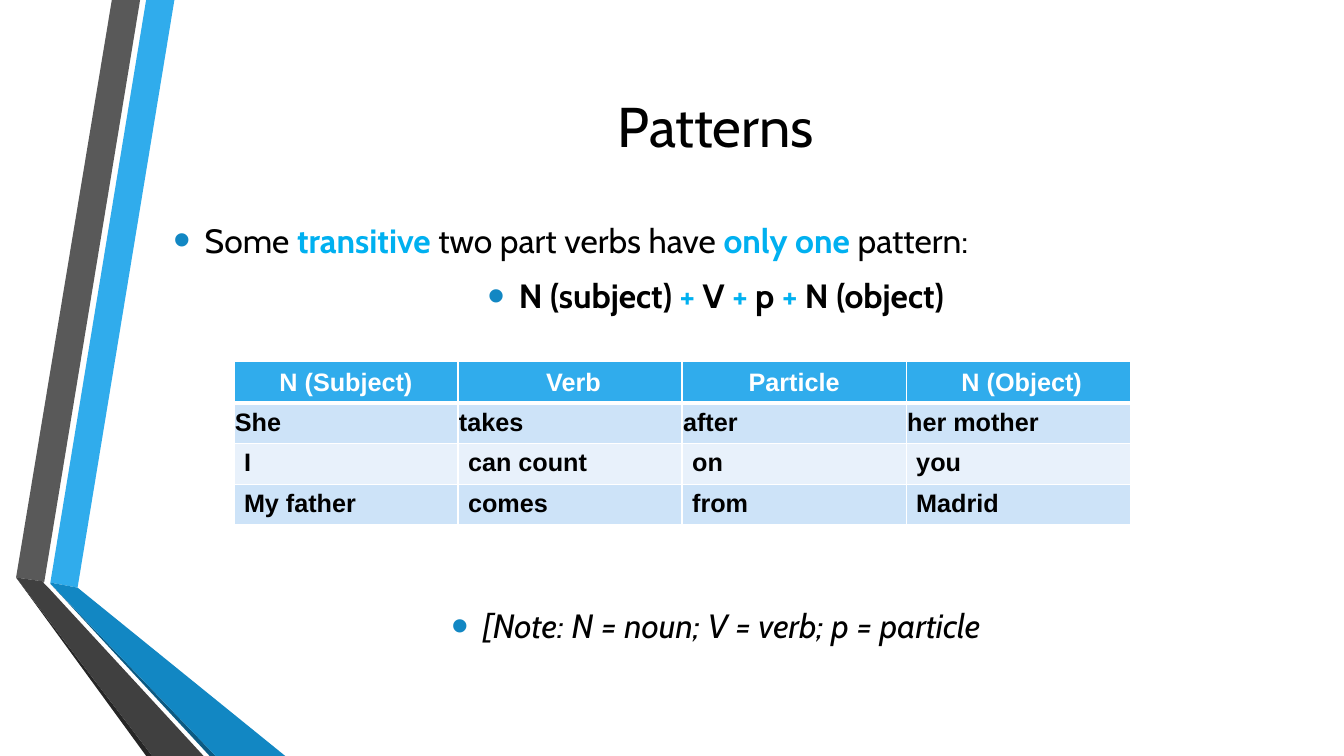
from dataclasses import dataclass

from lxml.etree import SubElement
from pptx import Presentation
from pptx.dml.color import RGBColor
from pptx.enum.text import MSO_ANCHOR as Anchor, MSO_AUTO_SIZE as AutoSize, PP_ALIGN as Align
from pptx.oxml.ns import qn
from pptx.util import Pt

EMU_PER_PX = 9144  # 100 px to the inch


@dataclass(frozen=True)
class Theme:
    text: str = "000000"
    white: str = "FFFFFF"
    accent: str = "00B0F0"
    bullet: str = "1287C3"
    blue: str = "30ACEC"
    blue_fold: str = "1287C3"
    blue_edge: str = "0C5A82"
    grey: str = "595959"
    grey_fold: str = "404040"
    grey_edge: str = "262626"
    band_dark: str = "CDE3F8"
    band_light: str = "E8F1FB"
    text_font: str = "Cabin"
    table_font: str = "Arial"
    title_size: int = 40
    body_size: int = 24
    table_size: int = 18


def px(length):
    return round(length * EMU_PER_PX)


def apply(target, values):
    for name, value in values.items():
        setattr(target, name, value)


class SlideBuilder:
    def __init__(self, presentation, theme):
        self.theme = theme
        self.slide = presentation.slides.add_slide(presentation.slide_layouts[1])

    def ribbon(self, color, points):
        builder = self.slide.shapes.build_freeform(*points[0], scale=EMU_PER_PX)
        builder.add_line_segments(points[1:], close=True)
        shape = builder.convert_to_shape()
        shape.shadow.inherit = False
        shape.fill.solid()
        shape.fill.fore_color.rgb = RGBColor.from_string(color)
        shape.line.fill.background()

    def run(self, paragraph, text, font, size, color=None, bold=False, italic=False):
        run = paragraph.add_run()
        run.text = text
        apply(run.font, {"name": font, "size": Pt(size), "bold": bold, "italic": italic})
        run.font.color.rgb = RGBColor.from_string(color or self.theme.text)

    def placeholder(self, shape, box, frame_format):
        """Move a template placeholder in front of the ribbons and format its frame."""
        shape.element.getparent().append(shape.element)
        apply(shape, dict(zip(("left", "top", "width", "height"), map(px, box))))
        apply(shape.text_frame, {"word_wrap": True, "auto_size": AutoSize.NONE, **frame_format})
        return shape.text_frame

    def title(self, text, box):
        frame = self.placeholder(self.slide.shapes.title, box, {"vertical_anchor": Anchor.MIDDLE})
        paragraph = frame.paragraphs[0]
        paragraph.alignment = Align.CENTER
        self.run(paragraph, text, self.theme.text_font, self.theme.title_size)

    def bullets(self, items, box, top_inset):
        """Fill the body with (alignment, points before, runs) items."""
        frame = self.placeholder(
            self.slide.placeholders[1], box,
            {"vertical_anchor": Anchor.TOP, "margin_top": px(top_inset)},
        )
        for index, (alignment, before, runs) in enumerate(items):
            paragraph = frame.add_paragraph() if index else frame.paragraphs[0]
            apply(paragraph, {
                "alignment": alignment, "line_spacing": 1.0,
                "space_before": Pt(before), "space_after": Pt(6),
            })
            self.bullet_mark(paragraph)
            for text, style in runs:
                self.run(paragraph, text, self.theme.text_font, self.theme.body_size, **style)

    def bullet_mark(self, paragraph):
        properties = paragraph._p.get_or_add_pPr()
        properties.set("marL", str(px(31)))
        properties.set("indent", str(px(-31)))
        color = SubElement(properties, qn("a:buClr"))
        SubElement(color, qn("a:srgbClr"), val=self.theme.bullet)
        SubElement(properties, qn("a:buSzPct"), val="145000")
        SubElement(properties, qn("a:buFont"), typeface="Arial")
        SubElement(properties, qn("a:buChar"), char="•")

    def borders(self, cell, widths):
        properties = cell._tc.get_or_add_tcPr()
        for index, (side, width) in enumerate(widths.items()):
            line = properties.makeelement(qn(f"a:ln{side}"), {"w": str(Pt(width))})
            fill = SubElement(line, qn("a:solidFill"))
            SubElement(fill, qn("a:srgbClr"), val=self.theme.white)
            properties.insert(index, line)

    def table(self, rows, box):
        """Draw a banded table whose first two rows have tight cells."""
        theme = self.theme
        table = self.slide.shapes.add_table(len(rows), len(rows[0]), *map(px, box)).table
        table.horz_banding = False
        tight = dict.fromkeys(("margin_left", "margin_top", "margin_right", "margin_bottom"), px(1))
        for row_index, row in enumerate(rows):
            header = row_index == 0
            band = theme.band_dark if row_index % 2 else theme.band_light
            for column_index, text in enumerate(row):
                cell = table.cell(row_index, column_index)
                cell.fill.solid()
                cell.fill.fore_color.rgb = RGBColor.from_string(theme.blue if header else band)
                if row_index < 2:
                    apply(cell, {"vertical_anchor": Anchor.MIDDLE, **tight})
                paragraph = cell.text_frame.paragraphs[0]
                paragraph.alignment = Align.CENTER if header else Align.LEFT
                self.run(paragraph, text, theme.table_font, theme.table_size,
                         color=theme.white if header else theme.text, bold=True)
                self.borders(cell, {
                    "L": 1, "R": 1,
                    "T": 3 if row_index == 1 else 1, "B": 3 if header else 1,
                })


def main():
    presentation = Presentation()
    apply(presentation, {"slide_width": px(1333), "slide_height": px(750)})
    theme = Theme()
    builder = SlideBuilder(presentation, theme)

    ribbons = [
        (theme.blue, [(50, 578), (77, 583), (173, 0), (145, 0)]),
        (theme.grey, [(139, 0), (111, 0), (16, 573), (44, 577)]),
        (theme.grey_edge, [(16, 573), (145, 750), (151, 750)]),
        (theme.blue_edge, [(50, 579), (208, 750), (214, 750)]),
        (theme.blue_fold, [(50, 579), (214, 750), (283, 750), (77, 583), (50, 578)]),
        (theme.grey_fold, [(202, 750), (48, 583), (43, 578), (44, 577), (16, 573), (151, 750)]),
    ]
    for color, points in ribbons:
        builder.ribbon(color, points)

    builder.title("Patterns", (162, 75, 1096, 98))

    plain, strong = {}, {"bold": True}
    accent = {"bold": True, "color": theme.accent}
    builder.bullets([
        (Align.LEFT, 0, [
            ("Some ", plain), ("transitive ", accent), ("two part verbs have ", plain),
            ("only one ", accent), ("pattern:", plain),
        ]),
        (Align.CENTER, 4.8, [
            ("N (subject) ", strong), ("+", accent), (" V ", strong), ("+", accent),
            (" p ", strong), ("+", accent), (" N (object)", strong),
        ]),
        (Align.CENTER, 201, [("[Note: N = noun; V = verb; p = particle", {"italic": True})]),
    ], box=(162, 156, 1096, 594), top_inset=62)

    builder.table([
        ["N (Subject)", " Verb", "Particle", " N (Object)"],
        ["She", "takes", "after", "her mother"],
        ["I", "can count", "on", "you"],
        ["My father", "comes", "from", "Madrid"],
    ], box=(232, 359, 889, 162))

    presentation.save("out.pptx")


if __name__ == "__main__":
    main()
